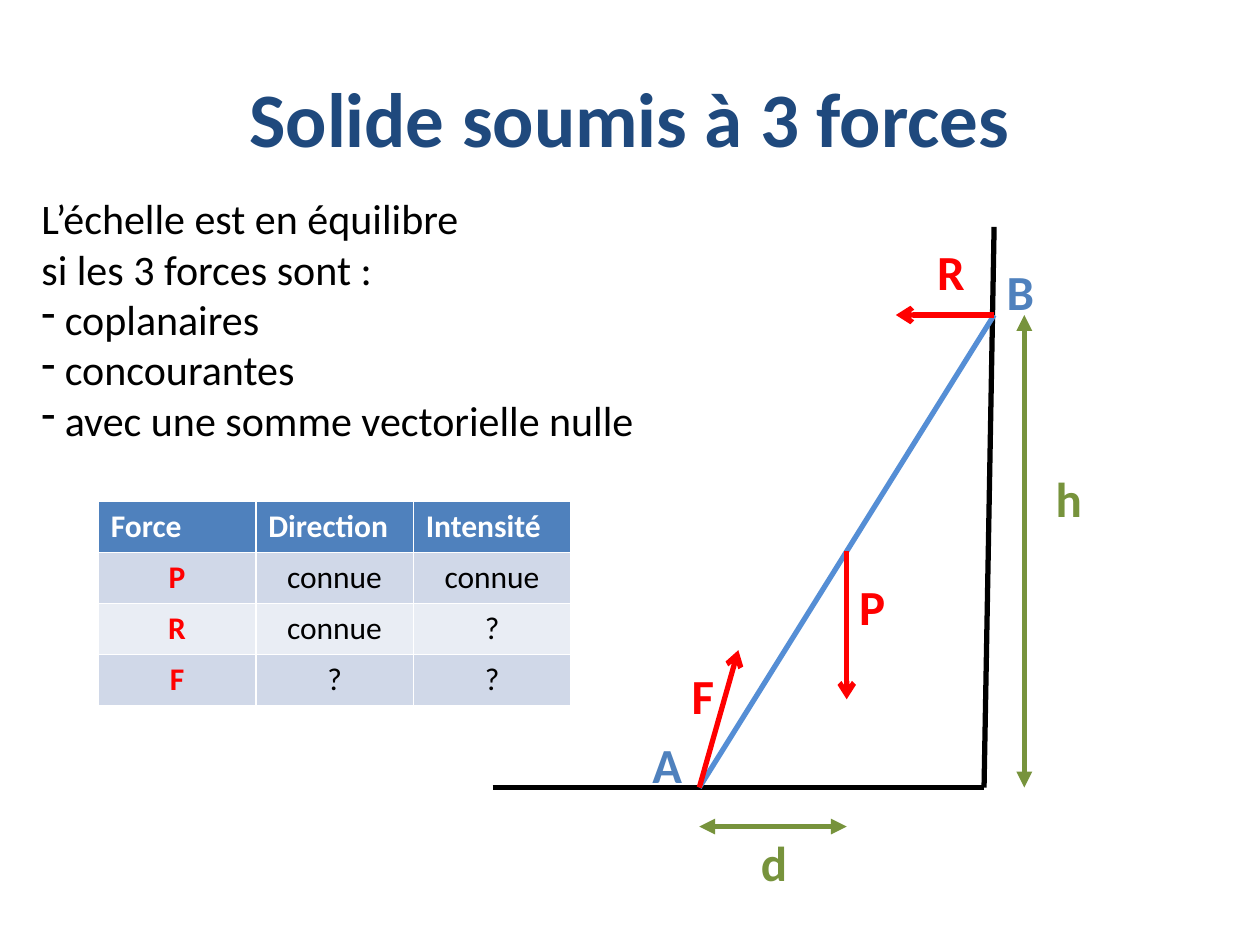
"""Build the slide on a ladder held in balance by three forces."""
from lxml import etree
from pptx import Presentation
from pptx import util as u
from pptx.dml.color import RGBColor
from pptx.enum import shapes, text
from pptx.oxml import ns

HUES = {"navy": "1F497D", "black": "000000", "white": "FFFFFF", "red": "FF0000",
        "blue": "4F81BD", "sky": "558ED5", "green": "77933C",
        "odd": "D0D8E8", "even": "E9EDF4"}
TITLE = "Solide soumis à 3 forces"
INTRO = ["L’échelle est en équilibre", "si les 3 forces sont :"]
TERMS = ["coplanaires", "concourantes", "avec une somme vectorielle nulle"]
ROWS = [("Force", "Direction", "Intensité"),
        ("P", "connue", "connue"),
        ("R", "connue", "?"),
        ("F", "?", "?")]
COL, ROW = 1.25, 0.405

FOOT, TOP, CORNER = (5.55, 6.25), (7.89, 2.5), (7.81, 6.25)
MID = tuple((a + b) / 2 for a, b in zip(FOOT, TOP))
LINES = [
    ((3.91, FOOT[1]), CORNER, "black", {}),
    (CORNER, (TOP[0], 1.8), "black", {}),
    (FOOT, TOP, "sky", {}),
    (MID, (MID[0], 5.55), "red", {"tailEnd": "arrow"}),
    ((FOOT[0], 6.56), (MID[0], 6.56), "green",
     {"headEnd": "triangle", "tailEnd": "triangle"}),
    ((8.13, TOP[1]), (8.13, FOOT[1]), "green",
     {"headEnd": "triangle", "tailEnd": "triangle"}),
    (TOP, (7.11, TOP[1]), "red", {"tailEnd": "arrow"}),
    (FOOT, (5.86, 5.16), "red", {"tailEnd": "arrow"}),
]
MARKS = [("P", 6.72, 4.53, "red"), ("A", 5.08, 5.78, "blue"),
         ("B", 7.89, 2.03, "blue"), ("h", 8.28, 3.67, "green"),
         ("d", 5.94, 6.56, "green"), ("R", 7.34, 1.87, "red"),
         ("F", 5.39, 5.23, "red")]


def rgb(hue):
    return RGBColor.from_string(HUES[hue])


def write(par, words, size, hue, bold=False, align=None):
    run = par.add_run()
    run.text = words
    par.alignment = align
    form = {"name": "Calibri", "size": u.Pt(size), "bold": bold}
    for key, value in form.items():
        setattr(run.font, key, value)
    run.font.color.rgb = rgb(hue)


def add_box(slide, left, top, width, height, wrap):
    frame = slide.shapes.add_textbox(*map(u.Inches, (left, top, width, height))).text_frame
    frame.word_wrap = wrap
    frame.auto_size = text.MSO_AUTO_SIZE.SHAPE_TO_FIT_TEXT
    return frame


def add_line(slide, start, end, hue, tips):
    line = slide.shapes.add_connector(
        shapes.MSO_CONNECTOR.STRAIGHT, *map(u.Inches, start + end))
    line.line.width = u.Pt(3)
    line.line.color.rgb = rgb(hue)
    stroke = line.line._get_or_add_ln()
    for tag, kind in tips.items():
        etree.SubElement(stroke, ns.qn("a:" + tag), type=kind)
    etree.SubElement(line._element.spPr, ns.qn("a:effectLst"))


def add_intro(slide):
    frame = add_box(slide, 0.23, 1.48, 4.94, 2.12, False)
    for i, words in enumerate(INTRO + TERMS):
        par = frame.paragraphs[0] if i == 0 else frame.add_paragraph()
        item = i >= len(INTRO)
        write(par, " " + words if item else words, 24, "black")
        if item:
            etree.SubElement(par._p.get_or_add_pPr(), ns.qn("a:buChar"), char="-")


def add_grid(slide):
    size = (0.78, 3.98, COL * len(ROWS[0]), ROW * len(ROWS))
    grid = slide.shapes.add_table(len(ROWS), len(ROWS[0]), *map(u.Inches, size)).table
    for r, row in enumerate(ROWS):
        for c, words in enumerate(row):
            cell = grid.cell(r, c)
            cell.fill.solid()
            cell.fill.fore_color.rgb = rgb("blue" if r == 0 else "odd" if r % 2 else "even")
            hue = "white" if r == 0 else "red" if c == 0 else "black"
            align = text.PP_ALIGN.CENTER if r else None
            write(cell.text_frame.paragraphs[0], words, 18, hue, r == 0 or c == 0, align)


def main():
    deck = Presentation()
    deck.slide_width, deck.slide_height = u.Inches(10), u.Inches(7.5)
    slide = deck.slides.add_slide(deck.slide_layouts[5])
    title = slide.shapes.title
    place = {"left": 0.5, "top": 0.3, "width": 9, "height": 1.25}
    for key, value in place.items():
        setattr(title, key, u.Inches(value))
    title.text_frame.vertical_anchor = text.MSO_ANCHOR.MIDDLE
    write(title.text_frame.paragraphs[0], TITLE, 44, "navy", True, text.PP_ALIGN.CENTER)
    for line in LINES:
        add_line(slide, *line)
    for words, left, top, hue in MARKS:
        frame = add_box(slide, left, top, 0.47, 0.57, True)
        write(frame.paragraphs[0], words, 28, hue, True)
    add_intro(slide)
    add_grid(slide)
    deck.save("out.pptx")


if __name__ == "__main__":
    main()
